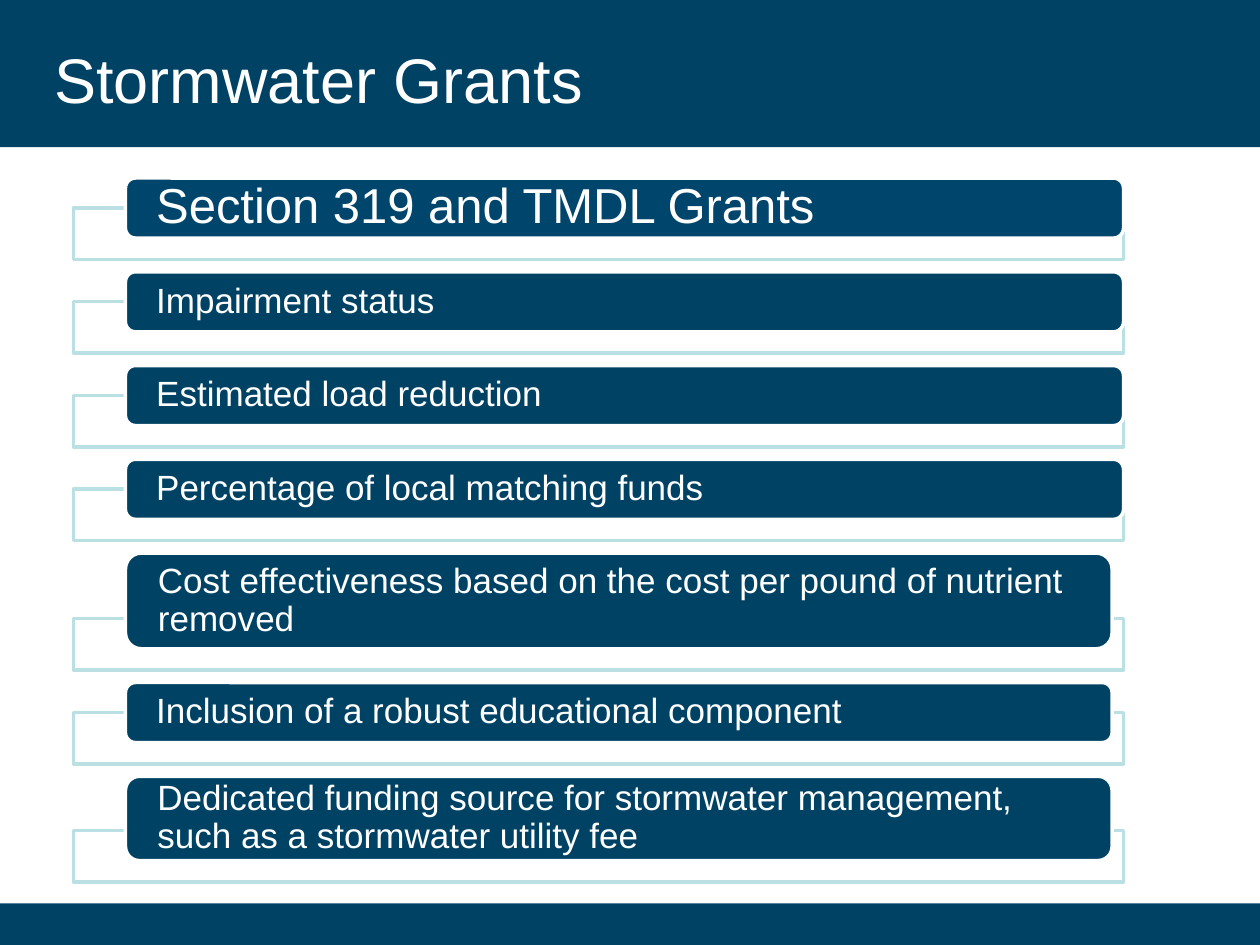
import pptx
import pptx.dml.color
import pptx.enum.shapes
import pptx.enum.text
import pptx.util

Cm = pptx.util.Cm
Pt = pptx.util.Pt
RGBColor = pptx.dml.color.RGBColor
SHAPE = pptx.enum.shapes.MSO_SHAPE

NAVY = RGBColor(0x00, 0x42, 0x64)
HEADING_BLUE = RGBColor(0x00, 0x45, 0x6C)
PALE_TEAL = RGBColor(0xBB, 0xE0, 0xE3)
WHITE = RGBColor(0xFF, 0xFF, 0xFF)

SLIDE_WIDTH, SLIDE_HEIGHT = 25.4, 19.05
HEADER_HEIGHT, FOOTER_HEIGHT = 2.97, 0.84

FRAME_HEIGHT = 1.04
FRAME_OVERLAP = 0.61
ROW_GAP = 0.25
PILL_INDENT = 1.05

# Text, pill height, pill width, text size, pill colour
CRITERIA = [
    ("Section 319 and TMDL Grants", 1.21, 20.12, 28, HEADING_BLUE),
    ("Impairment status", 1.21, 20.12, 20, NAVY),
    ("Estimated load reduction", 1.21, 20.12, 20, NAVY),
    ("Percentage of local matching funds", 1.21, 20.12, 20, NAVY),
    ("Cost effectiveness based on the cost per pound of nutrient removed",
     1.93, 19.89, 20, NAVY),
    ("Inclusion of a robust educational component", 1.21, 19.89, 20, NAVY),
    ("Dedicated funding source for stormwater management, "
     "such as a stormwater utility fee", 1.7, 19.89, 20, NAVY),
]


def add_block(slide, preset, left, top, width, height, fill, outline=None):
    block = slide.shapes.add_shape(
        preset, Cm(left), Cm(top), Cm(width), Cm(height))
    block.shadow.inherit = False
    block.fill.solid()
    block.fill.fore_color.rgb = fill
    if outline is None:
        block.line.fill.background()
    else:
        block.line.color.rgb = outline
        block.line.width = Pt(2)
    return block


def write_text(holder, text, size, side_margin, line_spacing=1.0):
    frame = holder.text_frame
    frame_format = {
        "word_wrap": True,
        "vertical_anchor": pptx.enum.text.MSO_ANCHOR.MIDDLE,
        "margin_left": Cm(side_margin),
        "margin_right": Cm(side_margin),
        "margin_top": 0,
        "margin_bottom": 0,
    }
    for name, value in frame_format.items():
        setattr(frame, name, value)
    paragraph = frame.paragraphs[0]
    paragraph.alignment = pptx.enum.text.PP_ALIGN.LEFT
    paragraph.line_spacing = line_spacing
    run = paragraph.add_run()
    run.text = text
    for name, value in {"name": "Arial", "size": Pt(size)}.items():
        setattr(run.font, name, value)
    run.font.color.rgb = WHITE


def add_header(slide, left, top, width, height):
    add_block(slide, SHAPE.RECTANGLE, left, top, width, height, NAVY)
    title = slide.shapes.add_textbox(
        Cm(left + 0.85), Cm(top + 0.42), Cm(18.85), Cm(2.33))
    write_text(title, "Stormwater Grants", 36, 0.25)


def add_footer(slide, left, top, width, height):
    add_block(slide, SHAPE.RECTANGLE, left, top, width, height, NAVY)


def add_criteria(slide, left, top, width):
    """Stack the criteria, each pill overlapping the top of its frame."""
    for text, pill_height, pill_width, size, colour in CRITERIA:
        frame_top = top + pill_height - FRAME_OVERLAP
        add_block(slide, SHAPE.RECTANGLE, left, frame_top, width,
                  FRAME_HEIGHT, WHITE, PALE_TEAL)
        pill = add_block(slide, SHAPE.ROUNDED_RECTANGLE, left + PILL_INDENT,
                         top, pill_width, pill_height, colour, WHITE)
        write_text(pill, text, size, 0.56, 0.9)
        top = frame_top + FRAME_HEIGHT + ROW_GAP


def main():
    deck = pptx.Presentation()
    deck.slide_width = Cm(SLIDE_WIDTH)
    deck.slide_height = Cm(SLIDE_HEIGHT)
    slide = deck.slides.add_slide(deck.slide_layouts[6])
    add_header(slide, 0, 0, SLIDE_WIDTH, HEADER_HEIGHT)
    add_footer(slide, 0, SLIDE_HEIGHT - FOOTER_HEIGHT,
               SLIDE_WIDTH, FOOTER_HEIGHT)
    add_criteria(slide, 1.48, 3.59, 21.17)
    deck.save("out.pptx")


if __name__ == "__main__":
    main()
